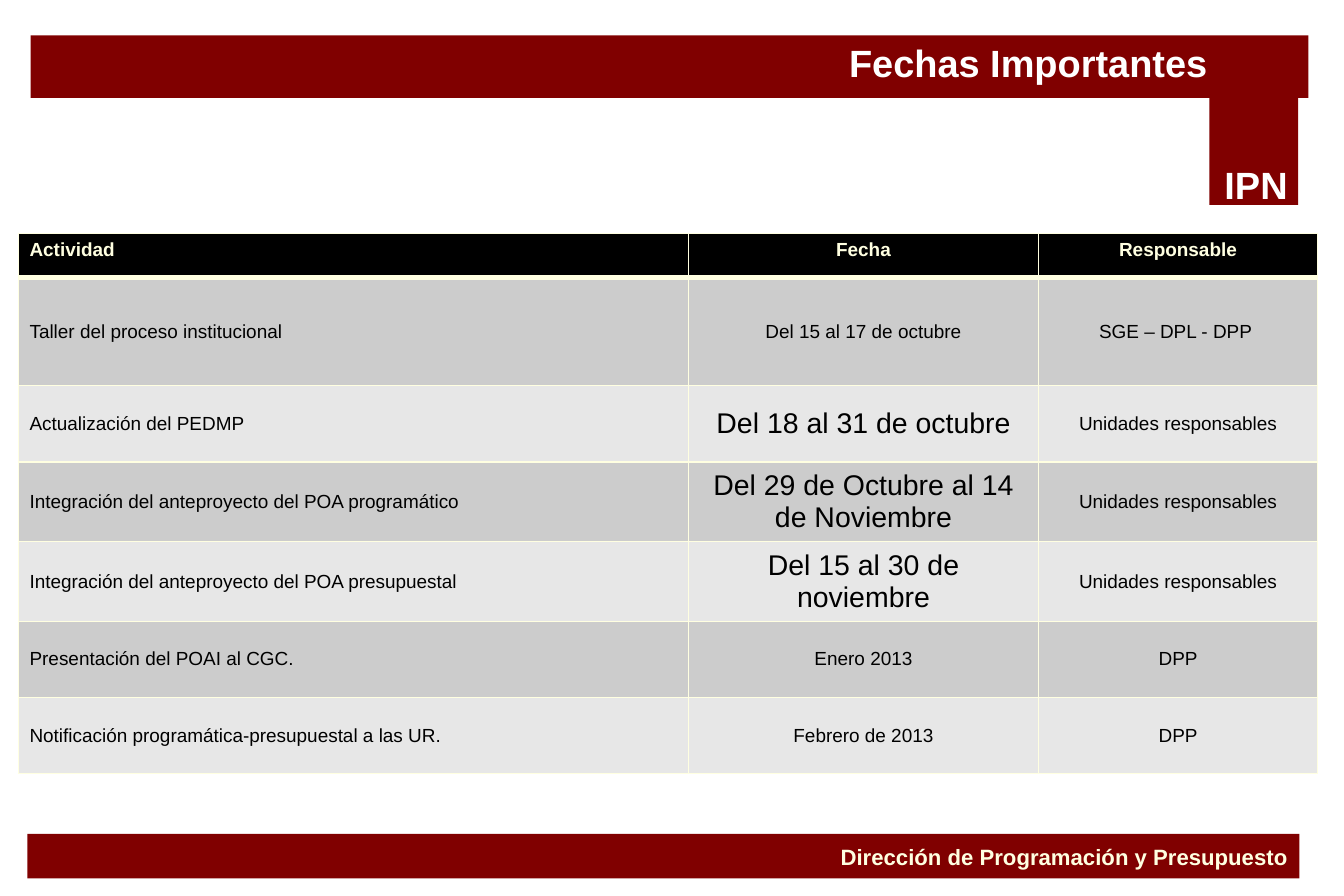
"""Build the slide of important dates with its banner, table and footer."""
from dataclasses import dataclass

from lxml import etree
from pptx import Presentation
from pptx.dml.color import RGBColor
from pptx.enum.shapes import MSO_SHAPE
from pptx.enum.text import MSO_ANCHOR, PP_ALIGN
from pptx.oxml.ns import qn
from pptx.util import Inches, Pt

RECTANGLE = MSO_SHAPE.RECTANGLE
TOP, MIDDLE = MSO_ANCHOR.TOP, MSO_ANCHOR.MIDDLE
LEFT, CENTER, RIGHT = PP_ALIGN.LEFT, PP_ALIGN.CENTER, PP_ALIGN.RIGHT
MAROON, CREAM, WHITE, BLACK = "800000", "FFFFE1", "FFFFFF", "000000"
BAND_COLORS = ("CCCCCC", "E7E7E7")
SLIDE_HEIGHT = 63 / 8
SLIDE_WIDTH = SLIDE_HEIGHT * 3 / 2
COLUMN_WIDTHS = (5.89, 3.08, 2.45)
COLUMN_ALIGNMENTS = (LEFT, CENTER, CENTER)
HEADINGS = ("Actividad", "Fecha", "Responsable")
HEADER_HEIGHT = 0.39


@dataclass(frozen=True)
class Box:
    left: float
    top: float
    width: float
    height: float

    def lengths(self) -> tuple:
        return tuple(Inches(value) for value in (self.left, self.top, self.width, self.height))


@dataclass(frozen=True)
class Activity:
    name: str
    date: str
    owner: str
    date_size: int = 12
    height: float = 0.67


ACTIVITIES = (
    Activity("Taller del proceso institucional", "Del 15 al 17 de octubre",
             "SGE – DPL - DPP ", height=0.95),
    Activity("Actualización del PEDMP", "Del 18 al 31 de octubre",
             "Unidades responsables", date_size=18),
    Activity("Integración del anteproyecto del POA programático",
             "Del 29 de Octubre al 14 de Noviembre", "Unidades responsables", date_size=18),
    Activity("Integración del anteproyecto del POA presupuestal",
             "Del 15 al 30 de noviembre", "Unidades responsables", date_size=18),
    Activity("Presentación del POAI al CGC.", "Enero 2013", "DPP"),
    Activity("Notificación programática-presupuestal a las UR.", "Febrero de 2013", "DPP"),
)


def rgb(color: str) -> RGBColor:
    return RGBColor.from_string(color)


def write_text(frame, text: str, *, size: int, color: str, bold: bool = False,
               alignment=LEFT) -> None:
    paragraph = frame.paragraphs[0]
    paragraph.alignment = alignment
    run = paragraph.add_run()
    run.text = text
    run.font.name = "Arial"
    run.font.size = Pt(size)
    run.font.bold = bold
    run.font.color.rgb = rgb(color)


def add_block(slide, box: Box):
    shape = slide.shapes.add_shape(RECTANGLE, *box.lengths())
    shape.shadow.inherit = False
    shape.fill.solid()
    shape.fill.fore_color.rgb = rgb(MAROON)
    shape.line.fill.background()
    return shape


def add_label(slide, box: Box, text: str, *, alignment, margin: float = 0.05) -> None:
    frame = slide.shapes.add_textbox(*box.lengths()).text_frame
    frame.word_wrap = True
    frame.margin_top = frame.margin_bottom = Inches(margin)
    write_text(frame, text, size=24, color=WHITE, bold=True, alignment=alignment)


def add_borders(cell, top: int, bottom: int) -> None:
    properties = cell._tc.get_or_add_tcPr()
    for side, width in (("L", 1), ("R", 1), ("T", top), ("B", bottom)):
        line = etree.SubElement(properties, qn(f"a:ln{side}"), w=str(int(Pt(width))))
        fill = etree.SubElement(line, qn("a:solidFill"))
        etree.SubElement(fill, qn("a:srgbClr"), val=CREAM)


def fill_row(table, index: int, texts: tuple, sizes: tuple) -> None:
    header = index == 0
    background = BLACK if header else BAND_COLORS[(index - 1) % 2]
    for column, (text, size) in enumerate(zip(texts, sizes)):
        cell = table.cell(index, column)
        add_borders(cell, top=3 if index == 1 else 1, bottom=3 if header else 1)
        cell.fill.solid()
        cell.fill.fore_color.rgb = rgb(background)
        cell.vertical_anchor = TOP if header else MIDDLE
        write_text(cell.text_frame, text, size=size, color=CREAM if header else BLACK,
                   bold=header, alignment=COLUMN_ALIGNMENTS[column])


def add_schedule(slide) -> None:
    heights = [HEADER_HEIGHT] + [activity.height for activity in ACTIVITIES]
    box = Box(0.16, 2.05, sum(COLUMN_WIDTHS), sum(heights))
    table = slide.shapes.add_table(len(heights), len(COLUMN_WIDTHS), *box.lengths()).table
    for column, width in zip(table.columns, COLUMN_WIDTHS):
        column.width = Inches(width)
    for row, height in zip(table.rows, heights):
        row.height = Inches(height)
    fill_row(table, 0, HEADINGS, (12, 12, 12))
    for index, activity in enumerate(ACTIVITIES, start=1):
        fill_row(table, index, (activity.name, activity.date, activity.owner),
                 (12, activity.date_size, 12))


def main() -> None:
    presentation = Presentation()
    presentation.slide_width = Inches(SLIDE_WIDTH)
    presentation.slide_height = Inches(SLIDE_HEIGHT)
    slide = presentation.slides.add_slide(presentation.slide_layouts[6])
    add_block(slide, Box(10.63, 0.55, 0.78, 1.25))
    add_block(slide, Box(0.27, 0.31, 11.23, 0.55))
    add_label(slide, Box(10.57, 1.37, 0.94, 0.5), "IPN", alignment=CENTER)
    footer = add_block(slide, Box(0.24, 7.33, 11.18, 0.39)).text_frame
    footer.vertical_anchor = MIDDLE
    write_text(footer, "Dirección de Programación y Presupuesto", size=14, color=CREAM,
               bold=True, alignment=RIGHT)
    add_label(slide, Box(2.76, 0.29, 7.95, 0.52), "Fechas Importantes",
              alignment=RIGHT, margin=0.06)
    add_schedule(slide)
    presentation.save("out.pptx")


if __name__ == "__main__":
    main()
